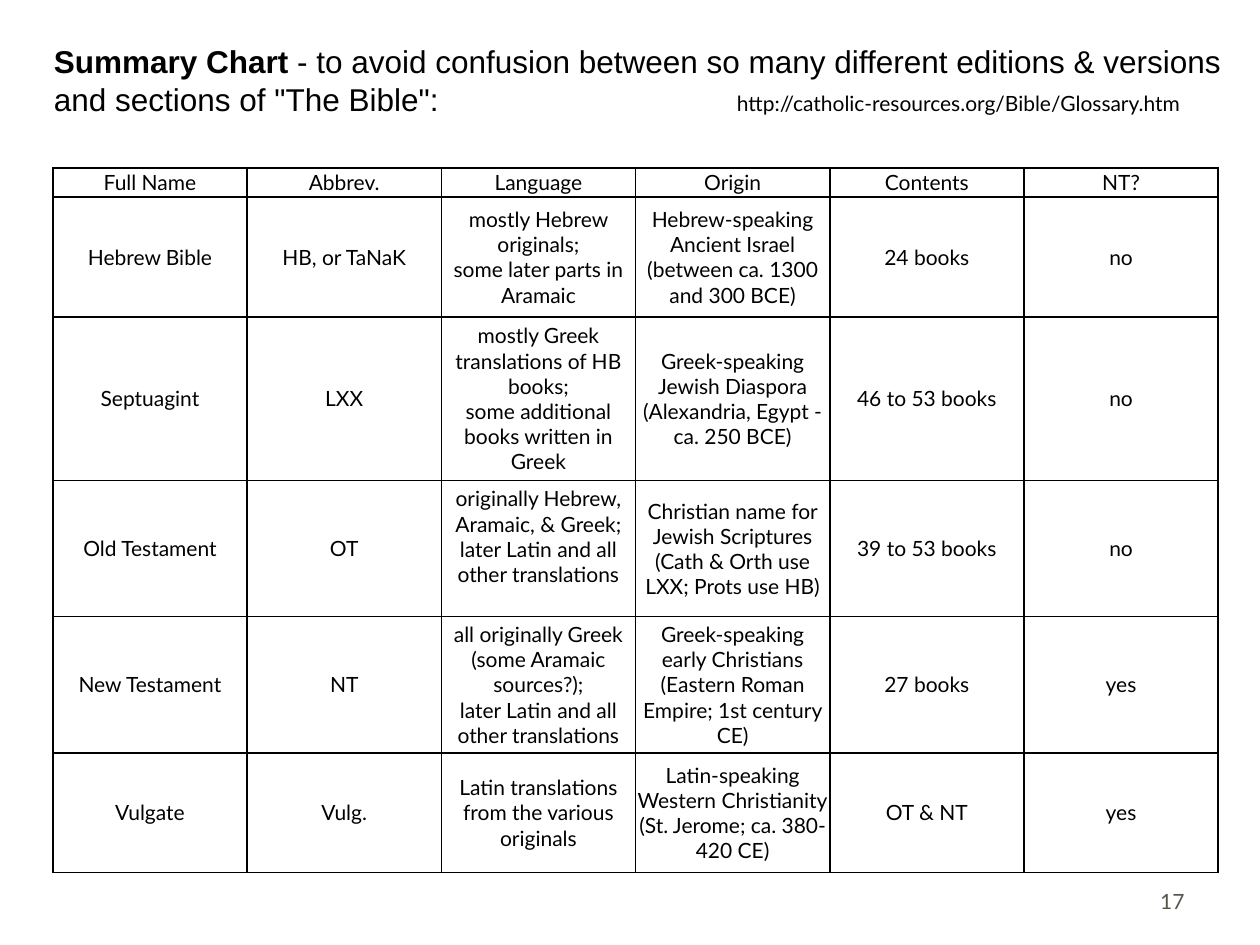
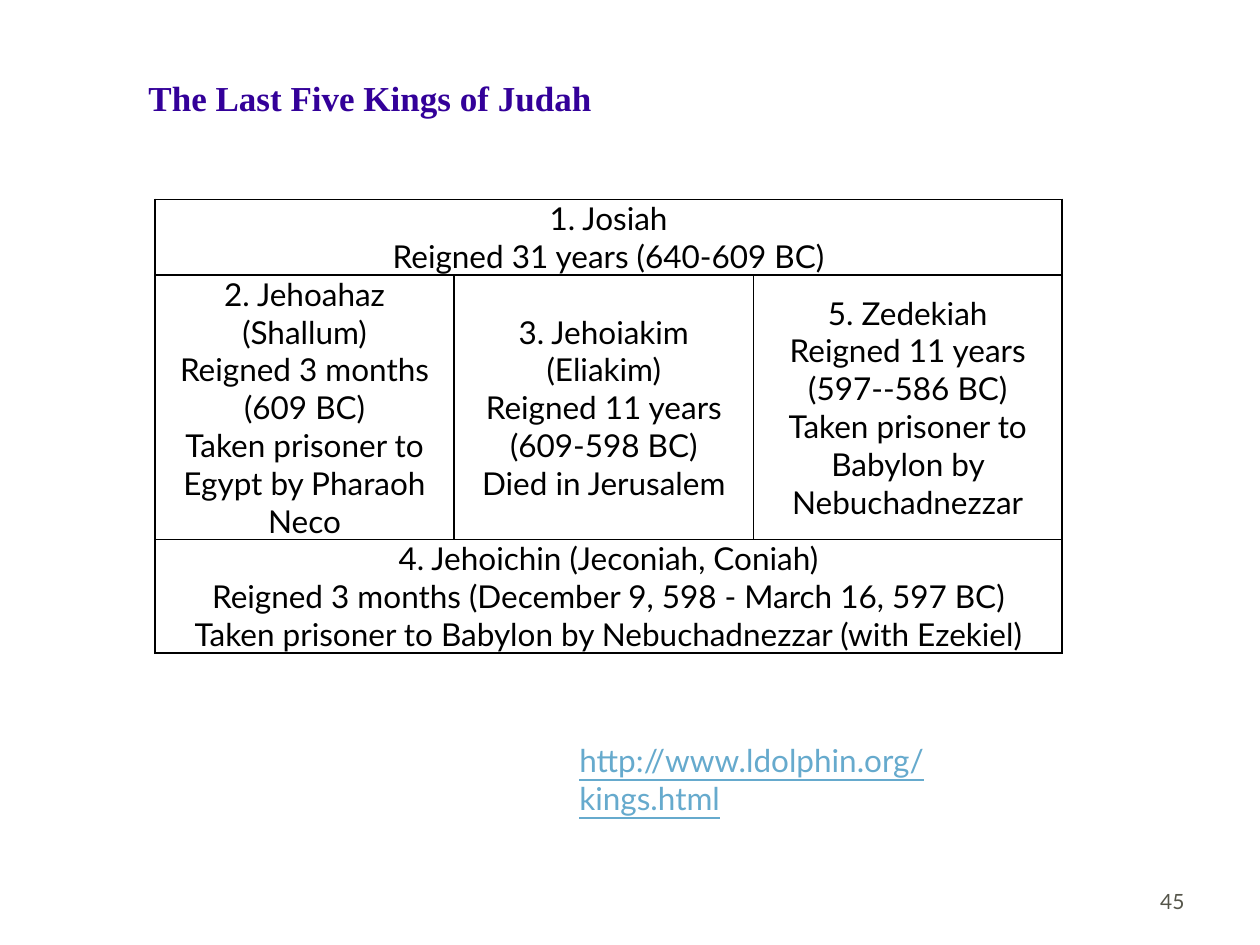
import pptx
import pptx.dml.color
import pptx.enum.text
import pptx.oxml
import pptx.oxml.ns
import pptx.util

ANCHOR = pptx.enum.text.MSO_ANCHOR
ALIGN = pptx.enum.text.PP_ALIGN


def color(hex_code):
    return pptx.dml.color.RGBColor.from_string(hex_code)


class Deck:
    """Shared style and current slide; lengths are percent of the slide's size."""

    BODY, TITLE, SERIF = "Lato", "Arial", "Times New Roman"
    INK, FOOTER, HEADING, LINK = "000000", "55554A", "330099", "66AACD"

    def __init__(self, width, height):
        self.file = pptx.Presentation()
        self.file.slide_width = pptx.util.Inches(width)
        self.file.slide_height = pptx.util.Inches(height)
        self.slide = None

    def x(self, share):
        return round(self.file.slide_width * share / 100)

    def y(self, share):
        return round(self.file.slide_height * share / 100)

    def new_slide(self, number):
        self.slide = self.file.slides.add_slide(self.file.slide_layouts[6])
        self.text((71.7, 92.67, 23.3, 5.33), [number], ink=self.FOOTER,
                  align=ALIGN.RIGHT, anchor=ANCHOR.MIDDLE)

    def style(self, paragraph, size, face, ink, align):
        paragraph.alignment = align
        font = paragraph.font
        font.size = pptx.util.Pt(size)
        font.name = face
        font.color.rgb = color(ink)
        return font

    def text(self, box, runs, size=12, face=BODY, ink=INK, align=ALIGN.LEFT,
             anchor=ANCHOR.TOP):
        """Add a one-paragraph text box; return the paragraph."""
        left, top, width, height = box
        frame = self.slide.shapes.add_textbox(
            self.x(left), self.y(top), self.x(width), self.y(height)).text_frame
        frame.word_wrap = True
        frame.vertical_anchor = anchor
        paragraph = frame.paragraphs[0]
        for words in runs:
            paragraph.add_run().text = words
        self.style(paragraph, size, face, ink, align)
        return paragraph

    def border(self, cell):
        properties = cell._tc.get_or_add_tcPr()
        for side in ("lnL", "lnR", "lnT", "lnB"):
            properties.append(pptx.oxml.parse_xml(
                f'<a:{side} {pptx.oxml.ns.nsdecls("a")} w="12700"><a:solidFill>'
                f'<a:srgbClr val="{self.INK}"/></a:solidFill></a:{side}>'))

    def table(self, corner, columns, heights, rows, size, side_inset, inset):
        """Add a ruled table; a row holding one text spans every column."""
        left, top = corner
        grid = self.slide.shapes.add_table(
            len(rows), len(columns), self.x(left), self.y(top),
            self.x(sum(columns)), self.y(sum(heights))).table
        grid.first_row = grid.horz_banding = False
        for column, width in zip(grid.columns, columns):
            column.width = self.x(width)
        for row, height in zip(grid.rows, heights):
            row.height = self.y(height)
        for cell in grid.iter_cells():
            cell.margin_left = cell.margin_right = self.x(side_inset)
            cell.margin_top = cell.margin_bottom = self.y(inset)
            cell.vertical_anchor = ANCHOR.MIDDLE
            self.border(cell)
            cell.fill.background()
        for r, texts in enumerate(rows):
            if len(texts) == 1:
                grid.cell(r, 0).merge(grid.cell(r, len(columns) - 1))
            for c, words in enumerate(texts):
                paragraph = grid.cell(r, c).text_frame.paragraphs[0]
                paragraph.text = words
                self.style(paragraph, size, self.BODY, self.INK, ALIGN.CENTER)
        return grid


EDITIONS = [
    ["Full Name", "Abbrev.", "Language", "Origin", "Contents", "NT?"],
    ["Hebrew Bible", "HB, or TaNaK",
     "mostly Hebrew originals;\nsome later parts in Aramaic",
     "Hebrew-speaking Ancient Israel\n(between ca. 1300 and 300 BCE)",
     "24 books", "no"],
    ["Septuagint", "LXX",
     "mostly Greek translations of HB books;\nsome additional books written in Greek",
     "Greek-speaking Jewish Diaspora\n(Alexandria, Egypt - ca. 250 BCE)",
     "46 to 53 books", "no"],
    ["Old Testament", "OT",
     "originally Hebrew, Aramaic, & Greek;\nlater Latin and all other translations",
     "Christian name for Jewish Scriptures\n(Cath & Orth use LXX; Prots use HB)",
     "39 to 53 books", "no"],
    ["New Testament", "NT",
     "all originally Greek (some Aramaic sources?);\n"
     "later Latin and all other translations",
     "Greek-speaking early Christians\n(Eastern Roman Empire; 1st century CE)",
     "27 books", "yes"],
    ["Vulgate", "Vulg.", "Latin translations from the various originals",
     "Latin-speaking Western Christianity\n(St. Jerome; ca. 380-420 CE)",
     "OT & NT", "yes"],
]

KINGS = [
    ["1. Josiah\nReigned 31 years (640-609 BC)"],
    ["2. Jehoahaz (Shallum)\nReigned 3 months (609 BC)\n"
     "Taken prisoner to Egypt by Pharaoh Neco",
     "3. Jehoiakim (Eliakim)\nReigned 11 years (609-598 BC)\nDied in Jerusalem",
     "5. Zedekiah\nReigned 11 years (597--586 BC)\n"
     "Taken prisoner to Babylon by Nebuchadnezzar"],
    ["4. Jehoichin (Jeconiah, Coniah)\n"
     "Reigned 3 months (December 9, 598 - March 16, 597 BC)\n"
     "Taken prisoner to Babylon by Nebuchadnezzar (with Ezekiel)"],
]


def summary_chart(deck):
    deck.new_slide("17")
    editions = deck.table((4.2, 17.8), [92.5 / 6] * 6,
                          [3.07, 12.67, 17.33, 14.4, 14.4, 12.67],
                          EDITIONS, 12, 0.1, 0.13)
    # The Old Testament languages sit one line higher than centre
    editions.cell(3, 2).margin_bottom = deck.y(2.7)
    heading = deck.text(
        (3.3, 3.73, 95, 9.47),
        ["Summary Chart ", "- to avoid confusion between so many different editions "
         "& versions and sections of \"The Bible\":"],
        18, deck.TITLE, anchor=ANCHOR.MIDDLE)
    heading.runs[0].font.bold = True
    deck.text((57.5, 8.93, 37.5, 4),
              ["http://catholic-resources.org/Bible/Glossary.htm"])


def last_kings(deck):
    deck.new_slide("45")
    # Side insets keep each king's second name on its own line
    deck.table((12.3, 21.1), [23.75, 23.75, 24.5], [8, 28, 12], KINGS, 18, 0.6, 0)
    heading = deck.text((10.8, 7.47, 37.4, 9.47), ["The Last Five Kings of Judah"],
                        20, deck.SERIF, deck.HEADING)
    heading.font.bold = True
    source = deck.text((45, 77.73, 39.5, 9.47), ["http://www.ldolphin.org/kings.html"],
                       18, ink=deck.LINK)
    source.font.underline = True


def main():
    deck = Deck(10, 7.5)
    summary_chart(deck)
    last_kings(deck)
    deck.file.save("out.pptx")


if __name__ == "__main__":
    main()
